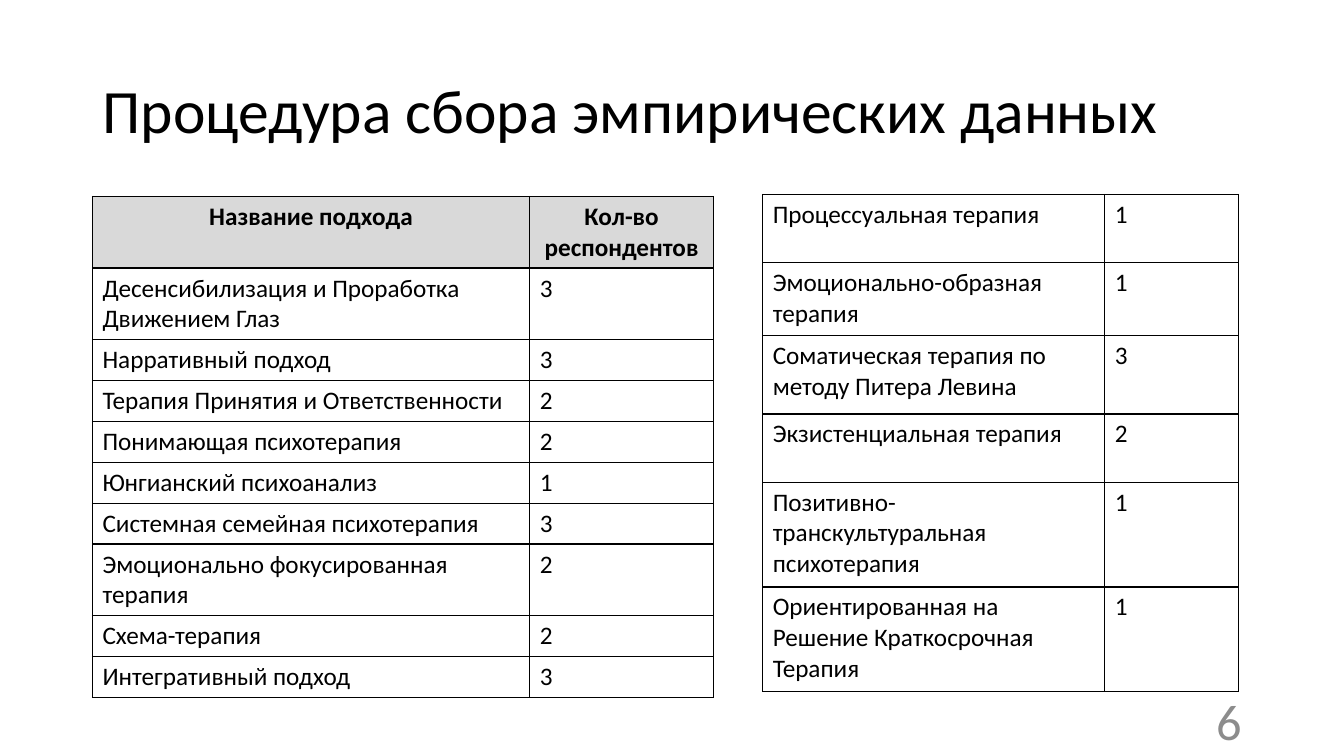
from lxml import etree
from pptx import Presentation
from pptx.dml.color import RGBColor
from pptx.enum.text import MSO_ANCHOR, PP_ALIGN
from pptx.oxml.ns import qn
from pptx.util import Cm, Pt

LEFT, CENTER, RIGHT = PP_ALIGN.LEFT, PP_ALIGN.CENTER, PP_ALIGN.RIGHT
MIDDLE = MSO_ANCHOR.MIDDLE

BLACK = RGBColor(0x00, 0x00, 0x00)
HEADER_GRAY = RGBColor(0xD9, 0xD9, 0xD9)
NUMBER_GRAY = RGBColor(0x8C, 0x8C, 0x8C)

# Row heights in cm by the number of text lines
ONE_LINE, TWO_LINES, THREE_LINES = 1.03, 1.8, 2.64

HEADER = ("Название подхода", "Кол-во респондентов", TWO_LINES)
MAIN_APPROACHES = [
    ("Десенсибилизация и Проработка Движением Глаз", 3, TWO_LINES),
    ("Нарративный подход", 3, ONE_LINE),
    ("Терапия Принятия и Ответственности", 2, ONE_LINE),
    ("Понимающая психотерапия", 2, ONE_LINE),
    ("Юнгианский психоанализ", 1, ONE_LINE),
    ("Системная семейная психотерапия", 3, ONE_LINE),
    ("Эмоционально фокусированная терапия", 2, TWO_LINES),
    ("Схема-терапия", 2, ONE_LINE),
    ("Интегративный подход", 3, ONE_LINE),
]
OTHER_APPROACHES = [
    ("Процессуальная терапия", 1, 1.72),
    ("Эмоционально-образная терапия", 1, 1.84),
    ("Соматическая терапия по методу Питера Левина", 3, 1.97),
    ("Экзистенциальная терапия", 2, 1.72),
    ("Позитивно-транскультуральная психотерапия", 1, THREE_LINES),
    ("Ориентированная на Решение Краткосрочная Терапия", 1, THREE_LINES),
]


class SlideBuilder:
    font = "Calibri"

    def __init__(self, prs):
        self.slide = prs.slides.add_slide(prs.slide_layouts[5])

    def set_text(self, tf, text, size, color=BLACK, align=LEFT, bold=False):
        tf.word_wrap = True
        p = tf.paragraphs[0]
        p.text = text
        p.alignment = align
        p.font.name, p.font.size = self.font, Pt(size)
        p.font.color.rgb, p.font.bold = color, bold
        return p

    def place_title(self, text, left, top, width, height):
        sp = self.slide.shapes.title
        sp.left, sp.top, sp.width, sp.height = map(Cm, (left, top, width, height))
        sp.text_frame.vertical_anchor = MIDDLE
        self.set_text(sp.text_frame, text, 44).line_spacing = 0.9

    def add_text(self, text, left, top, width, height, **style):
        sp = self.slide.shapes.add_textbox(*map(Cm, (left, top, width, height)))
        sp.text_frame.vertical_anchor = MIDDLE
        self.set_text(sp.text_frame, text, **style)

    def add_borders(self, cell):
        tc_pr = cell._tc.get_or_add_tcPr()
        for side in ("lnL", "lnR", "lnT", "lnB"):
            line = etree.SubElement(tc_pr, qn(f"a:{side}"), w=str(Pt(1)))
            fill = etree.SubElement(line, qn("a:solidFill"))
            etree.SubElement(fill, qn("a:srgbClr"), val=str(BLACK))

    def add_table(self, rows, left, top, widths, header=None):
        rows = [header, *rows] if header else rows
        height = sum(row[-1] for row in rows)
        table = self.slide.shapes.add_table(
            len(rows), len(widths), Cm(left), Cm(top), Cm(sum(widths)), Cm(height)
        ).table
        table.first_row = table.horz_banding = False
        for column, width in zip(table.columns, widths):
            column.width = Cm(width)
        for i, (*values, row_height) in enumerate(rows):
            table.rows[i].height = Cm(row_height)
            is_header = rows[i] is header
            for j, value in enumerate(values):
                cell = table.cell(i, j)
                self.add_borders(cell)
                if is_header:
                    cell.fill.solid()
                    cell.fill.fore_color.rgb = HEADER_GRAY
                else:
                    cell.fill.background()
                self.set_text(cell.text_frame, str(value), 18,
                              align=CENTER if is_header else LEFT, bold=is_header)


def main():
    prs = Presentation()
    prs.slide_width, prs.slide_height = Cm(33.87), Cm(19.05)
    page = SlideBuilder(prs)

    # Title
    page.place_title("Процедура сбора эмпирических данных", 2.33, 1.01, 29.21, 3.68)

    # Approaches and respondent counts
    page.add_table(MAIN_APPROACHES, 2.33, 4.95, (11.02, 4.63), HEADER)
    page.add_table(OTHER_APPROACHES, 19.22, 4.9, (8.62, 3.38))

    # Slide number
    page.add_text("6", 23.92, 17.66, 7.62, 1.01, size=36, color=NUMBER_GRAY, align=RIGHT)

    prs.save("out.pptx")


if __name__ == "__main__":
    main()
